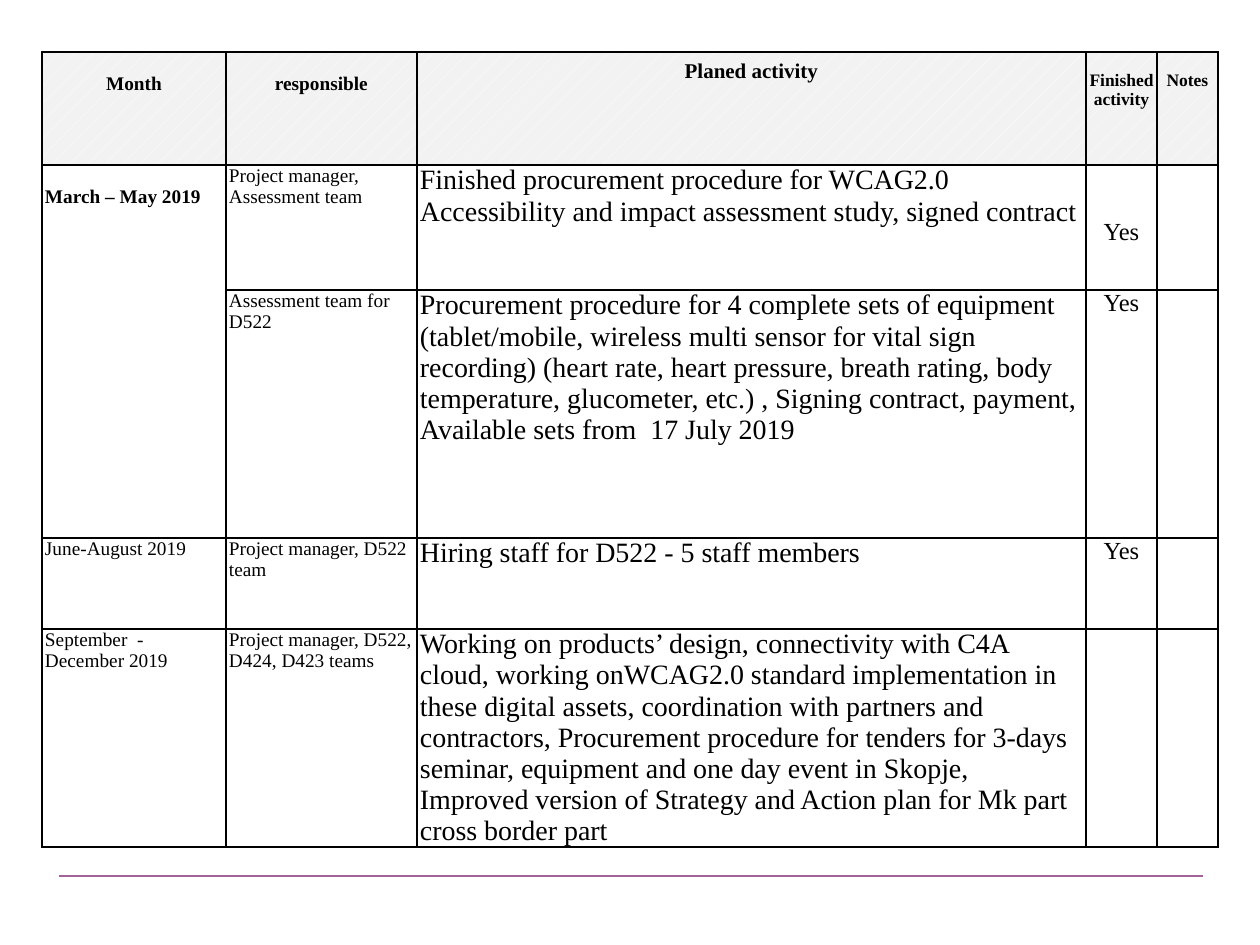
from lxml import etree
from pptx import Presentation, util as u
from pptx.dml.color import RGBColor
from pptx.enum import dml, shapes, text
from pptx.oxml.ns import qn

FONT = "Times New Roman"
LEFT, TOP = 42, 52
COLS = [184, 191, 669, 71, 61]
ROWS = [113, 125, 248, 91, 218]
SIZES = [11, 11, 16, 14, 14]
HEADER = [("Month", 11, 21), ("responsible", 11, 21), ("Planed activity", 12, 8),
          ("Finished activity", 10, 19), ("Notes", 10, 19)]
BODY = [
    ["March – May 2019", "Project manager, Assessment team",
     "Finished procurement procedure for WCAG2.0 Accessibility and impact assessment study, "
     "signed contract", "Yes", ""],
    ["", "Assessment team for D522",
     "Procurement procedure for 4 complete sets of equipment (tablet/mobile, wireless multi "
     "sensor for vital sign recording) (heart rate, heart pressure, breath rating, body "
     "temperature, glucometer, etc.) , Signing contract, payment, Available sets from  "
     "17 July 2019", "Yes", ""],
    ["June-August 2019", "Project manager, D522 team",
     "Hiring staff for D522 - 5 staff members", "Yes", ""],
    ["September  - December 2019", "Project manager, D522, D424, D423 teams",
     "Working on products’ design, connectivity with C4A cloud, working onWCAG2.0 standard "
     "implementation in these digital assets, coordination with partners and contractors, "
     "Procurement procedure for tenders for 3-days seminar, equipment and one day event in "
     "Skopje, Improved version of Strategy and Action plan for Mk part cross border part",
     "", ""],
]
TOP_GAPS = {(1, 0): 21, (1, 3): 54}


def px(n):
    return u.Emu(round(n * 914400 / 126))


def rgb(h):
    return RGBColor.from_string(h)


def put(cell, words, size=11, bold=False, center=False, gap=0):
    cell.margin_left = cell.margin_right = px(3)
    cell.margin_top, cell.margin_bottom = px(gap), 0
    p = cell.text_frame.paragraphs[0]
    p.alignment = text.PP_ALIGN.CENTER if center else text.PP_ALIGN.LEFT
    p.font.size = u.Pt(size)
    if words:
        r = p.add_run()
        r.text = words
        f = r.font
        f.name, f.size, f.bold = FONT, u.Pt(size), bold
        f.color.rgb = rgb("000000")


def border(cell, color="000000", width=1):
    tcPr = cell._tc.get_or_add_tcPr()
    for side in ("lnL", "lnR", "lnT", "lnB"):
        ln = etree.SubElement(tcPr, qn("a:" + side), w=str(u.Pt(width)))
        fill = etree.SubElement(ln, qn("a:solidFill"))
        etree.SubElement(fill, qn("a:srgbClr"), val=color)


def shade(cell, header):
    if header:
        cell.fill.patterned()
        cell.fill.pattern = dml.MSO_PATTERN.PERCENT_5
        cell.fill.fore_color.rgb = rgb("FFFFFF")
        cell.fill.back_color.rgb = rgb("F2F2F2")
    else:
        cell.fill.background()


def main():
    prs = Presentation()
    prs.slide_width, prs.slide_height = u.Inches(10), u.Inches(7.5)
    s = prs.slides.add_slide(prs.slide_layouts[6])

    rule = s.shapes.add_connector(shapes.MSO_CONNECTOR.STRAIGHT,
                                  px(59), px(876), px(1203), px(876))
    rule.line.color.rgb = rgb("A36298")
    rule.line.width = u.Pt(0.75)
    etree.SubElement(rule._element.spPr, qn("a:effectLst"))

    table = s.shapes.add_table(len(ROWS), len(COLS), px(LEFT), px(TOP),
                               px(sum(COLS)), px(sum(ROWS))).table
    table.first_row = table.horz_banding = False
    for col, w in zip(table.columns, COLS):
        col.width = px(w)
    for row, h in zip(table.rows, ROWS):
        row.height = px(h)

    for i in range(len(ROWS)):
        for j in range(len(COLS)):
            cell = table.cell(i, j)
            border(cell)
            shade(cell, header=i == 0)
            if i == 0:
                words, size, gap = HEADER[j]
                put(cell, words, size, bold=True, center=True, gap=gap)
            else:
                put(cell, BODY[i - 1][j], SIZES[j], bold=(i, j) == (1, 0),
                    center=j == 3, gap=TOP_GAPS.get((i, j), 0))
    table.cell(1, 0).merge(table.cell(2, 0))
    prs.save("out.pptx")


if __name__ == "__main__":
    main()
